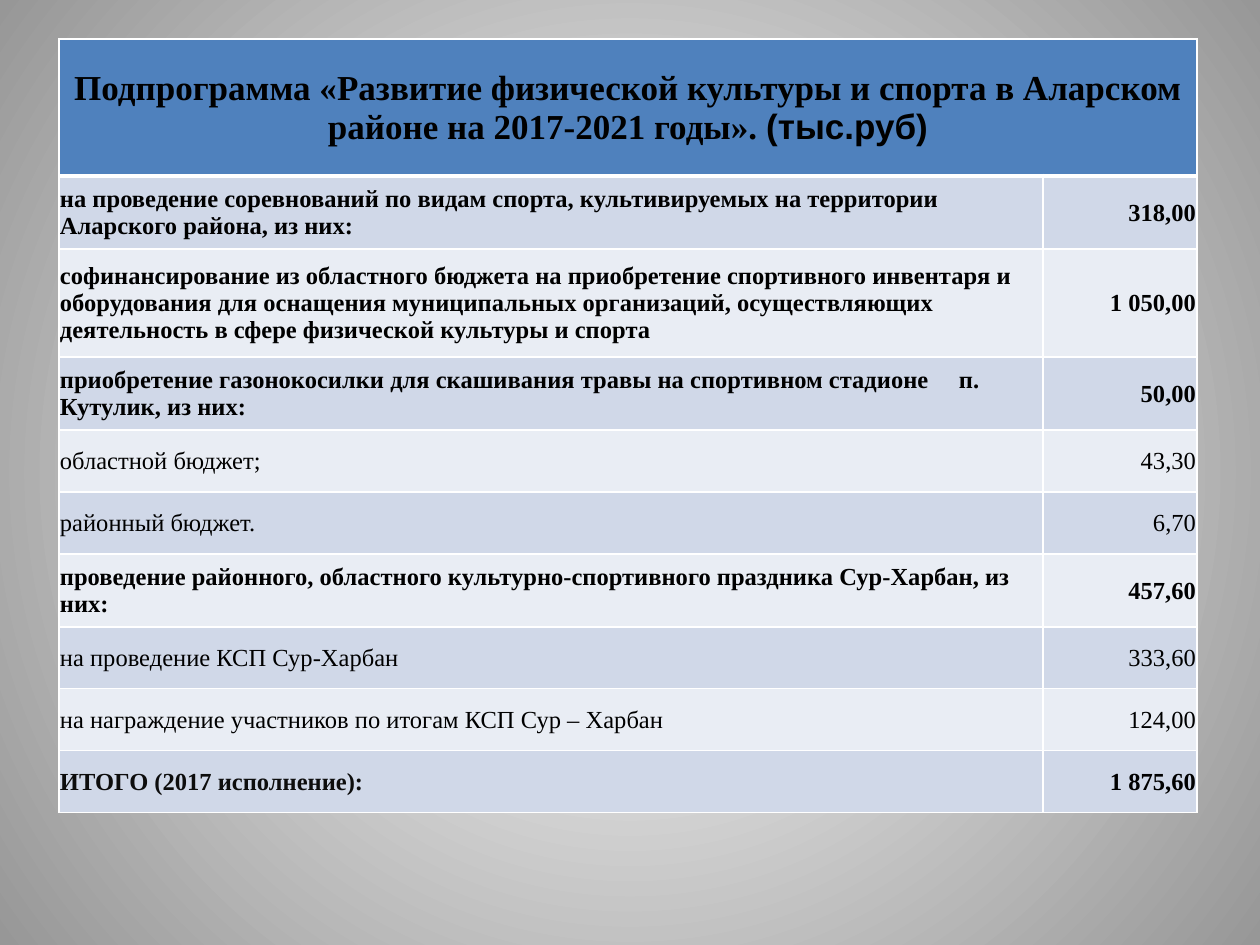
"""Build a one-slide budget table for a district sports programme."""
from dataclasses import dataclass

from lxml import etree
from pptx import Presentation
from pptx.dml.color import RGBColor
from pptx.enum.text import MSO_ANCHOR, PP_ALIGN
from pptx.oxml.ns import qn
from pptx.util import Pt

LEFT, CENTER, RIGHT = PP_ALIGN.LEFT, PP_ALIGN.CENTER, PP_ALIGN.RIGHT
MIDDLE = MSO_ANCHOR.MIDDLE
EMU_PER_PX = 914400 / 126
SLIDE_SIZE = (1260, 945)
TABLE_LEFT, TABLE_TOP = 59, 39
COLUMN_WIDTHS = (984, 154)
TITLE_HEIGHT = 137
GAP_TAB = 899


@dataclass(frozen=True)
class Theme:
    serif: str = "Times New Roman"
    sans: str = "Arial"
    title_size: int = 20
    body_size: int = 14
    text: str = "000000"
    total: str = "0D0D0D"
    header: str = "4F81BD"
    bands: tuple[str, str] = ("D0D8E8", "E9EDF4")
    border: str = "FFFFFF"
    glow: str = "FFFFFF"
    edge: str = "979797"


@dataclass(frozen=True)
class BudgetLine:
    label: str
    amount: str
    height: int = 62
    bold: bool = False
    label_color: str = Theme.text


TITLE = "Подпрограмма «Развитие физической культуры и спорта в Аларском районе на 2017-2021 годы». "
UNIT = "(тыс.руб)"
BUDGET = (
    BudgetLine("на проведение соревнований по видам спорта, культивируемых на территории "
               "Аларского района, из них:", "318,00", 73, True),
    BudgetLine("софинансирование из областного бюджета на приобретение спортивного инвентаря и "
               "оборудования для оснащения муниципальных организаций, осуществляющих "
               "деятельность в сфере физической культуры и спорта", "1 050,00", 108, True),
    BudgetLine("приобретение газонокосилки для скашивания травы на спортивном стадионе\t"
               "п. Кутулик, из них:", "50,00", 73, True),
    BudgetLine("областной бюджет;", "43,30"),
    BudgetLine("районный бюджет.", "6,70"),
    BudgetLine("проведение районного, областного культурно-спортивного праздника Сур-Харбан, "
               "из них:", "457,60", 73, True),
    BudgetLine("на проведение КСП Сур-Харбан", "333,60"),
    BudgetLine("на награждение участников по итогам КСП Сур – Харбан", "124,00"),
    BudgetLine("ИТОГО (2017 исполнение):", "1 875,60", bold=True, label_color=Theme.total),
)


def px(length: int) -> int:
    return round(length * EMU_PER_PX)


def paint_background(page, theme: Theme) -> None:
    fill = page.background.fill
    fill.gradient()
    for stop, color in zip(fill.gradient_stops, (theme.glow, theme.edge)):
        stop.color.rgb = RGBColor.from_string(color)
    gradient = page.element.find(".//" + qn("a:gradFill"))
    gradient.remove(gradient.find(qn("a:lin")))
    circle = etree.SubElement(gradient, qn("a:path"), path="circle")
    etree.SubElement(circle, qn("a:fillToRect"), l="50000", t="50000", r="50000", b="50000")


def add_borders(cell, color: str, top: int = 1, bottom: int = 1) -> None:
    properties = cell._tc.get_or_add_tcPr()
    for side, width in (("L", 1), ("R", 1), ("T", top), ("B", bottom)):
        line = etree.SubElement(properties, qn(f"a:ln{side}"), w=str(Pt(width)))
        solid = etree.SubElement(line, qn("a:solidFill"))
        etree.SubElement(solid, qn("a:srgbClr"), val=color)


def style_cell(cell, color: str, theme: Theme, top: int = 1, bottom: int = 1) -> None:
    add_borders(cell, theme.border, top, bottom)
    cell.fill.solid()
    cell.fill.fore_color.rgb = RGBColor.from_string(color)
    cell.margin_left = cell.margin_right = cell.margin_top = px(1)
    cell.margin_bottom = 0
    cell.vertical_anchor = MIDDLE


def write(paragraph, text: str, *, font: str, size: int, color: str, bold: bool, align) -> None:
    paragraph.alignment = align
    if "\t" in text:
        stops = etree.SubElement(paragraph._p.get_or_add_pPr(), qn("a:tabLst"))
        etree.SubElement(stops, qn("a:tab"), pos=str(px(GAP_TAB)), algn="l")
    span = paragraph.add_run()
    span.text = text
    span.font.name = font
    span.font.size = Pt(size)
    span.font.bold = bold
    span.font.color.rgb = RGBColor.from_string(color)


def fill_title(table, theme: Theme) -> None:
    title = table.cell(0, 0)
    title.merge(table.cell(0, 1))
    for cell in table.rows[0].cells:
        style_cell(cell, theme.header, theme, bottom=3)
    for text, font in ((TITLE, theme.serif), (UNIT, theme.sans)):
        write(title.text_frame.paragraphs[0], text, font=font, size=theme.title_size,
              color=theme.text, bold=True, align=CENTER)


def fill_line(table, index: int, line: BudgetLine, theme: Theme) -> None:
    contents = ((line.label, line.label_color, LEFT), (line.amount, theme.text, RIGHT))
    for cell, (text, color, align) in zip(table.rows[index].cells, contents):
        style_cell(cell, theme.bands[(index - 1) % 2], theme, top=3 if index == 1 else 1)
        write(cell.text_frame.paragraphs[0], text, font=theme.serif, size=theme.body_size,
              color=color, bold=line.bold, align=align)


def add_budget_table(page, theme: Theme) -> None:
    heights = (TITLE_HEIGHT, *(line.height for line in BUDGET))
    table = page.shapes.add_table(
        len(heights), len(COLUMN_WIDTHS), px(TABLE_LEFT), px(TABLE_TOP),
        px(sum(COLUMN_WIDTHS)), px(sum(heights))).table
    for column, width in zip(table.columns, COLUMN_WIDTHS):
        column.width = px(width)
    for row, height in zip(table.rows, heights):
        row.height = px(height)
    fill_title(table, theme)
    for index, line in enumerate(BUDGET, start=1):
        fill_line(table, index, line, theme)


def main() -> None:
    theme = Theme()
    deck = Presentation()
    deck.slide_width, deck.slide_height = map(px, SLIDE_SIZE)
    page = deck.slides.add_slide(deck.slide_layouts[6])
    paint_background(page, theme)
    add_budget_table(page, theme)
    deck.save("out.pptx")


if __name__ == "__main__":
    main()
